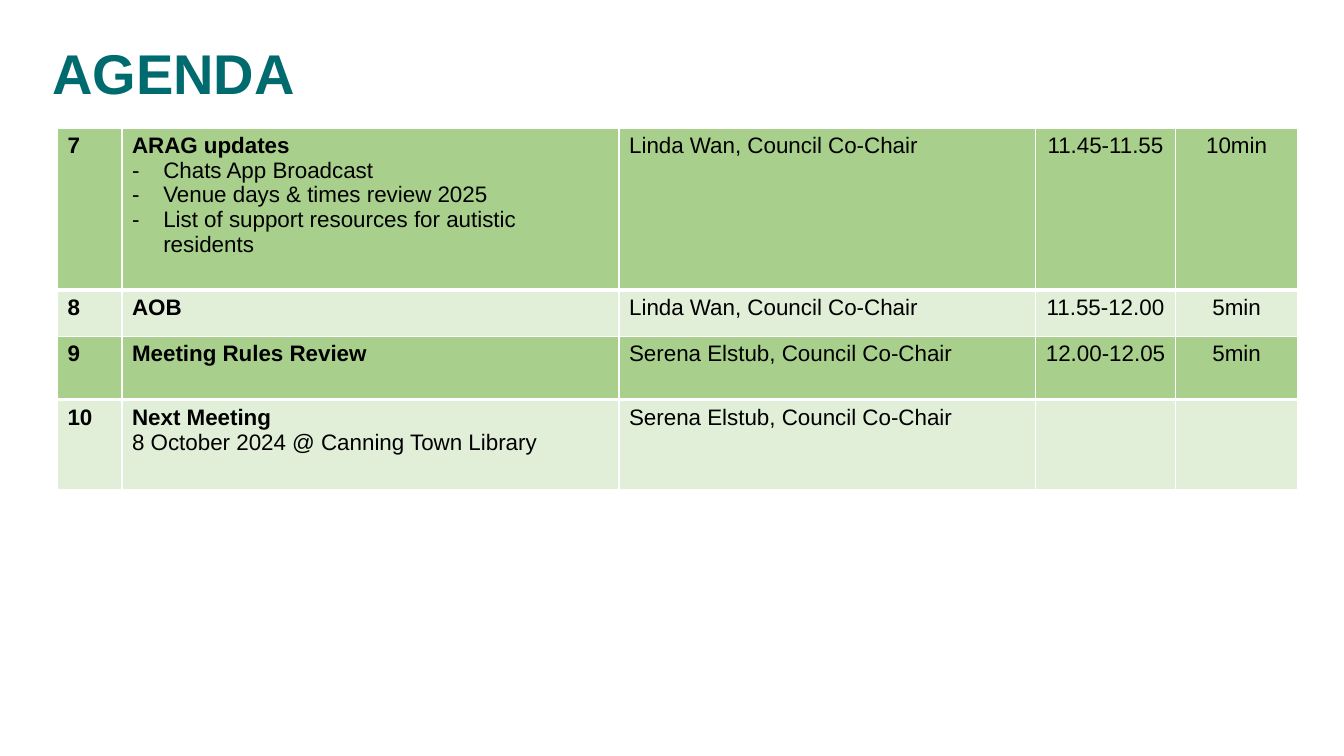
from lxml import etree
from pptx import Presentation
from pptx.dml.color import RGBColor
from pptx.enum.text import MSO_ANCHOR, PP_ALIGN
from pptx.oxml.ns import qn
from pptx.util import Inches, Pt

TEAL = RGBColor(0x00, 0x6B, 0x6F)
BLACK = RGBColor(0x00, 0x00, 0x00)
GREEN = RGBColor(0xA8, 0xD0, 0x8C)
PALE_GREEN = RGBColor(0xE1, 0xEF, 0xD8)
WHITE = RGBColor(0xFF, 0xFF, 0xFF)

FONT = "Arial"
TITLE = "AGENDA"
LINDA = "Linda Wan, Council Co-Chair"
SERENA = "Serena Elstub, Council Co-Chair"

# Each table is a list of rows: height, fill, bottom border in points, cells.
# A cell is a list of (style, text) lines.
TABLES = [
    [
        (1.61, GREEN, 3, [
            [("bold", "7")],
            [("bold", "ARAG updates"),
             ("dash", "Chats App Broadcast"),
             ("dash", "Venue days & times review 2025"),
             ("dash", "List of support resources for autistic residents")],
            [("plain", LINDA)],
            [("centre", "11.45-11.55")],
            [("centre", "10min")],
        ]),
        (0.46, PALE_GREEN, 1, [
            [("bold", "8")],
            [("bold", "AOB")],
            [("plain", LINDA)],
            [("centre", "11.55-12.00")],
            [("centre", "5min")],
        ]),
    ],
    [
        (0.63, GREEN, 3, [
            [("bold", "9")],
            [("bold", "Meeting Rules Review")],
            [("plain", SERENA)],
            [("centre", "12.00-12.05")],
            [("centre", "5min")],
        ]),
    ],
    [
        (0.9, PALE_GREEN, 3, [
            [("bold", "10")],
            [("bold", "Next Meeting"),
             ("plain", "8 October 2024 @ Canning Town Library")],
            [("plain", SERENA)],
            [],
            [],
        ]),
    ],
]
COLUMN_WIDTHS = [0.64, 4.93, 4.13, 1.39, 1.21]
TABLE_LEFT, TABLE_TOP = 0.57, 1.27
DASH_INDENT = 0.31


def style_font(font, size, color, bold):
    font.name = FONT
    font.size = Pt(size)
    font.color.rgb = color
    font.bold = bold


def add_dash(paragraph):
    """Give the paragraph a hanging dash as its bullet."""
    properties = paragraph._p.get_or_add_pPr()
    properties.set("marL", str(Inches(DASH_INDENT)))
    properties.set("indent", str(-Inches(DASH_INDENT)))
    color = etree.SubElement(properties, qn("a:buClr"))
    etree.SubElement(color, qn("a:srgbClr"), val=str(BLACK))
    etree.SubElement(properties, qn("a:buFont"), typeface=FONT)
    etree.SubElement(properties, qn("a:buChar"), char="-")


def set_borders(cell, bottom):
    properties = cell._tc.get_or_add_tcPr()
    for position, (side, width) in enumerate(
            [("lnL", 1), ("lnR", 1), ("lnT", 1), ("lnB", bottom)]):
        line = etree.Element(qn(f"a:{side}"), w=str(Pt(width)))
        fill = etree.SubElement(line, qn("a:solidFill"))
        etree.SubElement(fill, qn("a:srgbClr"), val=str(WHITE))
        properties.insert(position, line)


def fill_cell(cell, lines, color, bottom):
    cell.fill.solid()
    cell.fill.fore_color.rgb = color
    set_borders(cell, bottom)
    frame = cell.text_frame
    if not lines:
        frame.paragraphs[0].font.size = Pt(16)
    for number, (style, text) in enumerate(lines):
        paragraph = frame.add_paragraph() if number else frame.paragraphs[0]
        if style == "dash":
            add_dash(paragraph)
        if style == "centre":
            paragraph.alignment = PP_ALIGN.CENTER
        run = paragraph.add_run()
        run.text = text
        style_font(run.font, 16, BLACK, style == "bold")


def add_title(slide):
    box = slide.shapes.add_textbox(Inches(0.42), Inches(0.3), Inches(10), Inches(0.81))
    frame = box.text_frame
    frame.word_wrap = True
    frame.vertical_anchor = MSO_ANCHOR.BOTTOM
    paragraph = frame.paragraphs[0]
    paragraph.line_spacing = 0.9
    run = paragraph.add_run()
    run.text = TITLE
    style_font(run.font, 40, TEAL, True)


def add_agenda_table(slide, rows, top):
    """Draw one table and return its height in inches."""
    height = sum(row[0] for row in rows)
    table = slide.shapes.add_table(
        len(rows), len(COLUMN_WIDTHS), Inches(TABLE_LEFT), Inches(top),
        Inches(sum(COLUMN_WIDTHS)), Inches(height)).table
    table.first_row = False
    table.horz_banding = False
    for column, width in zip(table.columns, COLUMN_WIDTHS):
        column.width = Inches(width)
    for table_row, (row_height, color, bottom, cells) in zip(table.rows, rows):
        table_row.height = Inches(row_height)
        for cell, lines in zip(table_row.cells, cells):
            fill_cell(cell, lines, color, bottom)
    return height


def main():
    presentation = Presentation()
    presentation.slide_width = Inches(13.33)
    presentation.slide_height = Inches(7.5)
    slide = presentation.slides.add_slide(presentation.slide_layouts[6])
    add_title(slide)
    top = TABLE_TOP
    for rows in TABLES:
        top += add_agenda_table(slide, rows, top)
    presentation.save("out.pptx")


if __name__ == "__main__":
    main()
